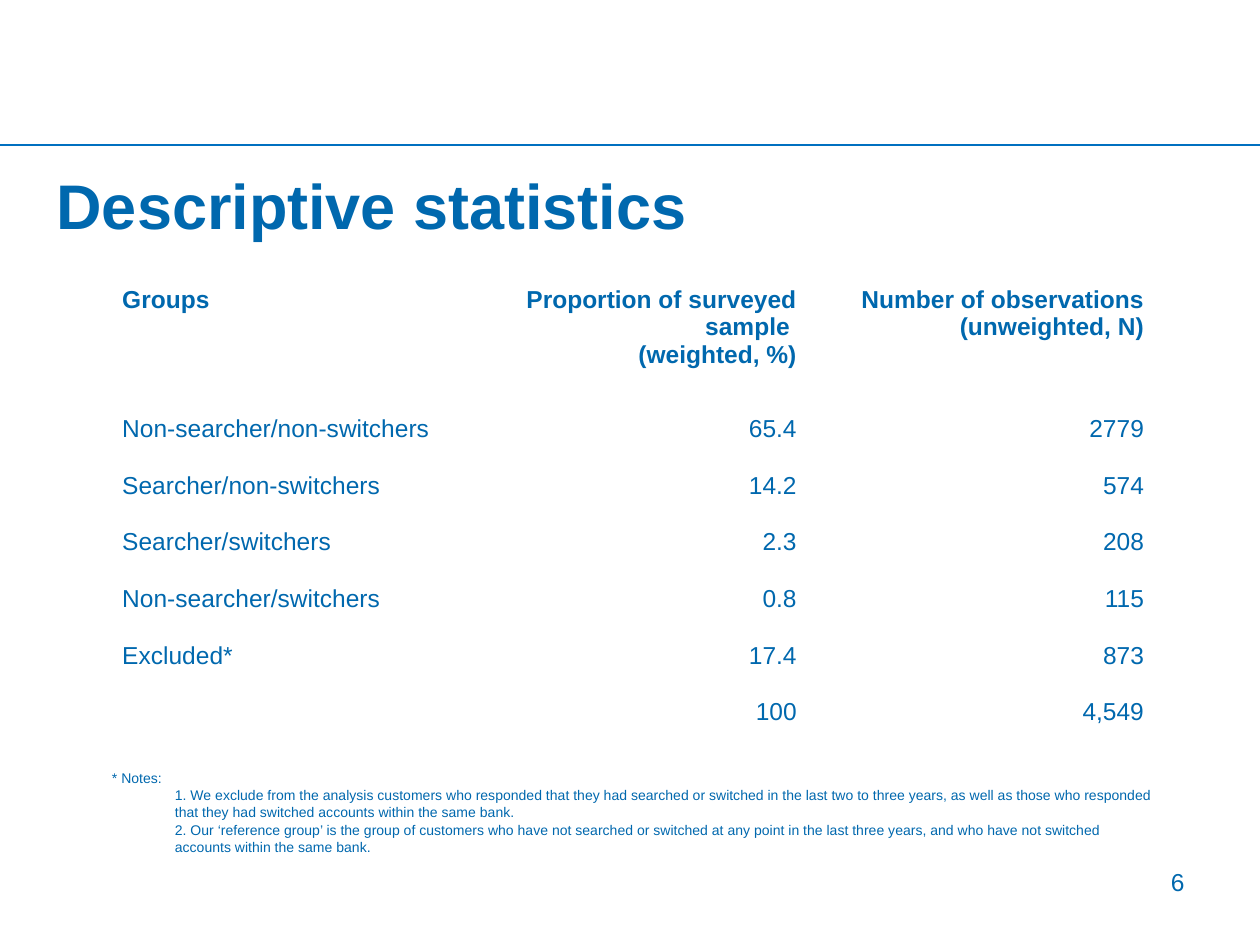
import copy

import pptx
import pptx.dml.color
import pptx.enum.shapes
import pptx.enum.text
import pptx.oxml
import pptx.oxml.ns
import pptx.util
from pptx.util import Inches

COLORS = {"text": "0068AE", "rule": "0070C0", "white": "FFFFFF"}
FONT = "Arial"
LEFT = pptx.enum.text.PP_ALIGN.LEFT
RIGHT = pptx.enum.text.PP_ALIGN.RIGHT
TOP = pptx.enum.text.MSO_ANCHOR.TOP
MIDDLE = pptx.enum.text.MSO_ANCHOR.MIDDLE

GROUP_ROWS = [
    ("Groups", "Proportion of surveyed sample \v(weighted, %)", "Number of observations (unweighted, N)"),
    ("Non-searcher/non-switchers", "65.4", "2779"),
    ("Searcher/non-switchers", "14.2", "574"),
    ("Searcher/switchers", "2.3", "208"),
    ("Non-searcher/switchers", "0.8", "115"),
    ("Excluded*", "17.4", "873"),
    ("", "100", "4,549"),
]
NOTES = [
    "1. We exclude from the analysis customers who responded that they had searched or switched in the last "
    "two to three years, as well as those who responded that they had switched accounts within the same bank.",
    "2. Our ‘reference group’ is the group of customers who have not searched or switched at any point in the "
    "last three years, and who have not switched accounts within the same bank.",
]


def rgb(name):
    return pptx.dml.color.RGBColor.from_string(COLORS[name])


def write_text(paragraph, text, size=14, bold=False, align=LEFT, space_after=0, indent=0):
    paragraph.text = text
    paragraph.alignment = align
    paragraph.space_after = pptx.util.Pt(space_after)
    if indent:
        properties = paragraph._p.get_or_add_pPr()
        properties.set("marL", str(Inches(indent)))
        properties.set("indent", "0")
    for run in paragraph.runs:
        run.font.name = FONT
        run.font.size = pptx.util.Pt(size)
        run.font.bold = bold
        run.font.color.rgb = rgb("text")
    for line_break in paragraph._p.findall(pptx.oxml.ns.qn("a:br")):
        line_break.append(copy.deepcopy(paragraph.runs[0]._r.rPr))


def add_text_frame(slide, box, anchor=TOP):
    shape = slide.shapes.add_textbox(*map(Inches, box))
    shape.text_frame.word_wrap = True
    shape.text_frame.vertical_anchor = anchor
    return shape.text_frame


def add_rule(slide, left, top, width):
    connector = slide.shapes.add_connector(
        pptx.enum.shapes.MSO_CONNECTOR.STRAIGHT,
        Inches(left), Inches(top), Inches(left + width), Inches(top),
    )
    connector.line.color.rgb = rgb("rule")
    connector.line.width = pptx.util.Pt(0.75)
    connector._element.spPr.append(
        pptx.oxml.parse_xml(f'<a:effectLst {pptx.oxml.ns.nsdecls("a")}/>')
    )


def add_title(slide, box):
    frame = add_text_frame(slide, box, anchor=MIDDLE)
    write_text(frame.paragraphs[0], "Descriptive statistics", size=36, bold=True)


def add_page_number(slide, box):
    frame = add_text_frame(slide, box)
    write_text(frame.paragraphs[0], "6", align=RIGHT)


def set_borders(cell, bottom_width):
    properties = cell._tc.get_or_add_tcPr()
    widths = {"lnL": 1, "lnR": 1, "lnT": 1, "lnB": bottom_width}
    for position, (side, width) in enumerate(widths.items()):
        border = pptx.oxml.parse_xml(
            f'<a:{side} {pptx.oxml.ns.nsdecls("a")} w="{pptx.util.Pt(width)}">'
            f'<a:solidFill><a:srgbClr val="{COLORS["white"]}"/></a:solidFill></a:{side}>'
        )
        properties.insert(position, border)


def add_group_table(slide, box, header_height=0.91):
    left, top, width, height = box
    row_count, column_count = len(GROUP_ROWS), len(GROUP_ROWS[0])
    shape = slide.shapes.add_table(row_count, column_count, *map(Inches, box))
    table = shape.table
    for column in table.columns:
        column.width = Inches(width / column_count)
    body_height = (height - header_height) / (row_count - 1)
    for row_index, values in enumerate(GROUP_ROWS):
        is_header = row_index == 0
        table.rows[row_index].height = Inches(header_height if is_header else body_height)
        for column_index, value in enumerate(values):
            cell = table.cell(row_index, column_index)
            cell.fill.solid()
            cell.fill.fore_color.rgb = rgb("white")
            cell.margin_left = cell.margin_right = Inches(0.08)
            cell.margin_top = cell.margin_bottom = 0
            cell.vertical_anchor = TOP if is_header else MIDDLE
            set_borders(cell, bottom_width=3 if is_header else 1)
            write_text(
                cell.text_frame.paragraphs[0], value, bold=is_header,
                align=RIGHT if column_index else LEFT,
                space_after=8 if is_header else 0,
            )


def add_notes(slide, box):
    frame = add_text_frame(slide, box)
    write_text(frame.paragraphs[0], "* Notes:", size=8)
    for note in NOTES:
        write_text(frame.add_paragraph(), note, size=8, space_after=1, indent=0.5)


def main():
    presentation = pptx.Presentation()
    presentation.slide_width = Inches(10)
    presentation.slide_height = Inches(7.5)
    slide = presentation.slides.add_slide(presentation.slide_layouts[6])
    add_rule(slide, 0, 1.15, 10)
    add_title(slide, (0.35, 1, 9.21, 1.25))
    add_page_number(slide, (7.17, 6.83, 2.33, 0.52))
    add_group_table(slide, (0.89, 2.27, 8.27, 3.61))
    add_notes(slide, (0.79, 6.06, 8.46, 0.79))
    presentation.save("out.pptx")


if __name__ == "__main__":
    main()
